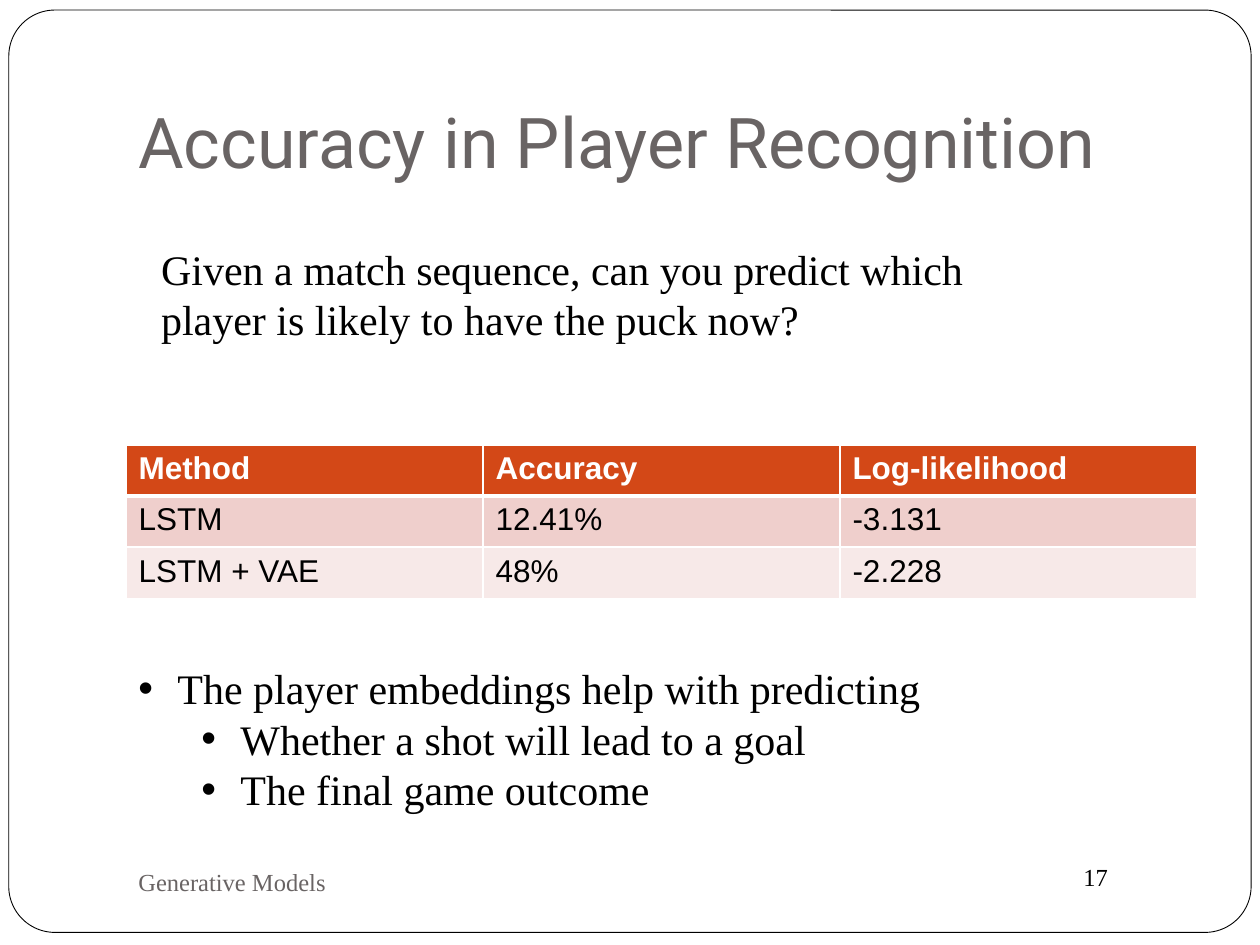
from lxml.etree import SubElement
from pptx import Presentation
from pptx.dml.color import RGBColor
from pptx.enum.shapes import MSO_SHAPE
from pptx.enum.text import MSO_ANCHOR
from pptx.oxml.ns import qn
from pptx.util import Inches, Pt


def color(code):
    return RGBColor.from_string(code)


def write(frame, lines, **format):
    """Fill a text frame with one paragraph per line, all in one format."""
    frame.word_wrap = True
    frame.text = "\n".join(lines)
    look = {"size": Pt(24), "name": "Times New Roman"} | format
    hue = look.pop("hue", "000000")
    for para in frame.paragraphs:
        for key, value in look.items():
            setattr(para.font, key, value)
        para.font.color.rgb = color(hue)


deck = Presentation()
deck.slide_width, deck.slide_height = Inches(10), Inches(7.5)
slide = deck.slides.add_slide(deck.slide_layouts[6])
shapes = slide.shapes

# Rounded page border
border = shapes.add_shape(MSO_SHAPE.ROUNDED_RECTANGLE, Inches(0.07), Inches(0.08),
                          Inches(9.86), Inches(7.32))
border.adjustments[0] = 0.05
border.shadow.inherit = False
border.fill.solid()
border.fill.fore_color.rgb = color("FFFFFF")
border.line.color.rgb = color("000000")
border.line.width = Pt(0.5)

# Text boxes: place, anchor, lines, format
gray = "696464"
small = {"size": Pt(14)}
texts = [
    ((8.5, 6.79, 1, 0.34), MSO_ANCHOR.TOP, ["17"], small),
    ((1, 0.3, 8.5, 1.25), MSO_ANCHOR.BOTTOM, ["Accuracy in Player Recognition"],
     {"size": Pt(40), "name": "Roboto", "hue": gray}),
    ((1, 6.75, 4.33, 0.5), MSO_ANCHOR.MIDDLE, ["Generative Models"],
     small | {"hue": gray}),
    ((1.18, 1.88, 6.98, 0.91), MSO_ANCHOR.TOP,
     ["Given a match sequence, can you predict which player is likely "
      "to have the puck now?"], {}),
    ((1, 5.21, 8.15, 1.31), MSO_ANCHOR.TOP,
     ["The player embeddings help with predicting",
      "Whether a shot will lead to a goal",
      "The final game outcome"], {}),
]
frames = []
for place, anchor, lines, format in texts:
    frame = shapes.add_textbox(*map(Inches, place)).text_frame
    frame.vertical_anchor = anchor
    write(frame, lines, **format)
    frames.append(frame)
title, points = frames[1], frames[-1]
title.margin_bottom = Inches(0.1)

# Bullets
for para, level in zip(points.paragraphs, [0, 1, 1]):
    para.level = level
    props = para._p.get_or_add_pPr()
    props.set("marL", str(Inches(0.31 + 0.5 * level)))
    props.set("indent", str(Inches(-0.31)))
    font = props.makeelement(qn("a:buFont"), {"typeface": "Arial"})
    mark = props.makeelement(qn("a:buChar"), {"char": "•"})
    props.insert(0, font)
    props.insert(1, mark)

# Results table
rows = [
    ("Method", "Accuracy", "Log-likelihood"),
    ("LSTM", "12.41%", "-3.131"),
    ("LSTM + VAE", "48%", "-2.228"),
]
fills = ["D34817", "EFCFCC", "F7E9E8"]
table = shapes.add_table(3, 3, Inches(1), Inches(3.53),
                         Inches(8.5), Inches(1.22)).table
for r, (row, fill) in enumerate(zip(rows, fills)):
    head = r == 0
    for c, text in enumerate(row):
        cell = table.cell(r, c)
        write(cell.text_frame, [text], size=Pt(18), name="Arial", bold=head,
              hue="FFFFFF" if head else "000000")
        props = cell._tc.get_or_add_tcPr()
        for side in "LRTB":
            thick = (head and side == "B") or (r == 1 and side == "T")
            line = SubElement(props, qn(f"a:ln{side}"), w=str(Pt(3 if thick else 1)))
            paint = SubElement(line, qn("a:solidFill"))
            SubElement(paint, qn("a:srgbClr"), val="FFFFFF")
        cell.fill.solid()
        cell.fill.fore_color.rgb = color(fill)

deck.save("out.pptx")
